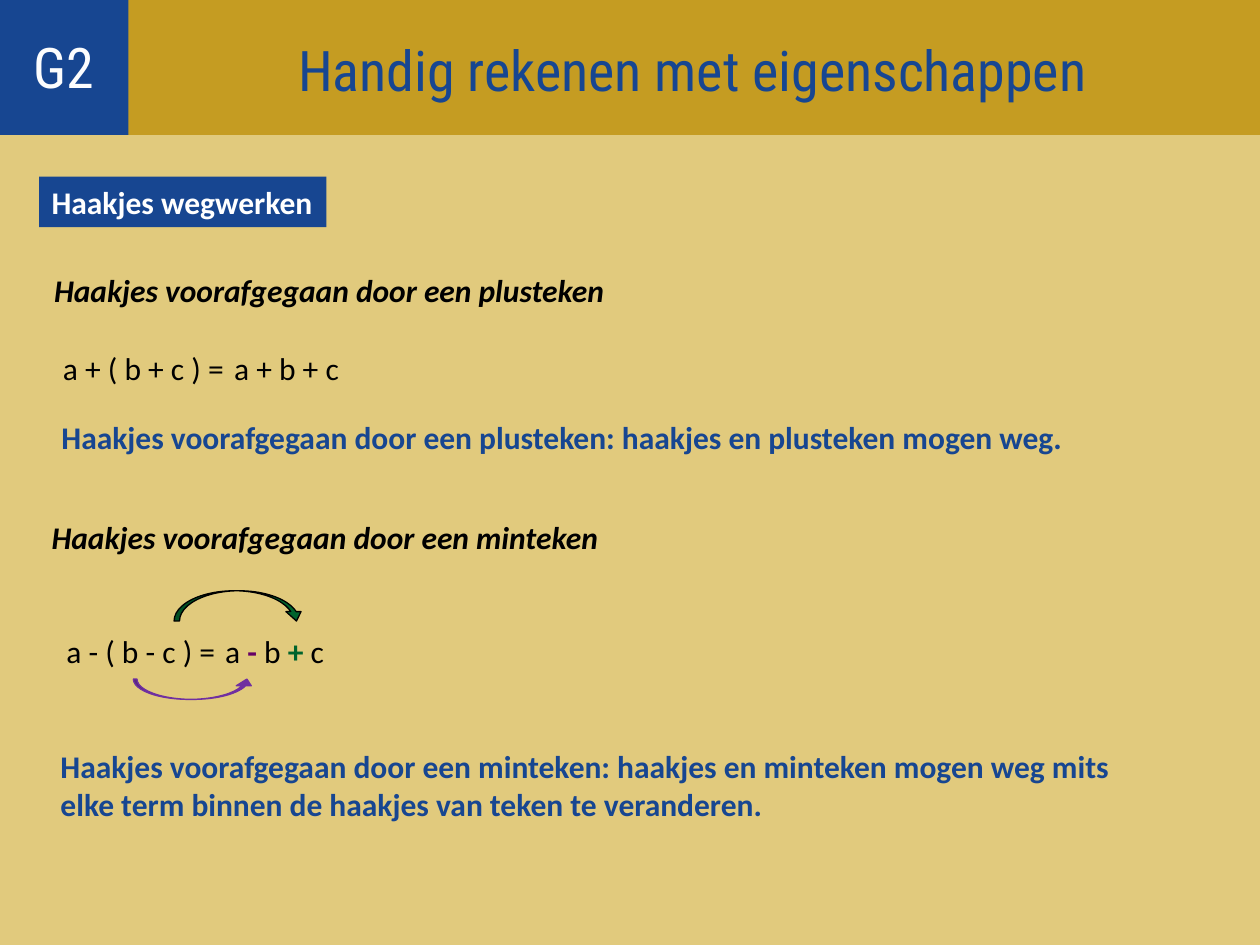
from pptx import Presentation
from pptx import util as u
from pptx.dml.color import RGBColor
from pptx.enum import shapes, text

HUES = {
    "sand": "E1CA7D", "gold": "C59C22", "blue": "174691", "white": "FFFFFF",
    "pale": "FCFDFE", "black": "000000", "plum": "660066", "green": "00642D",
    "violet": "7030A0",
}
LINE = 1.02  # height of a one-line text box, in cm
KIND = shapes.MSO_SHAPE


def hue(name):
    return RGBColor.from_string(HUES[name])


def place(box, left, top, wide, high):
    """Turn an offset within box (left, top in cm) into slide lengths."""
    return [u.Cm(n) for n in (box[0] + left, box[1] + top, wide, high)]


def style(par, color, size=18, face="Calibri", bold=None, slant=None):
    font = par.font
    font.name, font.size = face, u.Pt(size)
    font.bold, font.italic = bold, slant
    font.color.rgb = hue(color)


def label(slide, spot, lines, color="black", wrap=False, **look):
    """Add a text box; each line is a list of (words, color or None) runs."""
    item = slide.shapes.add_textbox(*spot)
    frame = item.text_frame
    frame.word_wrap = wrap
    frame.auto_size = text.MSO_AUTO_SIZE.SHAPE_TO_FIT_TEXT
    for i, runs in enumerate(lines):
        par = frame.add_paragraph() if i else frame.paragraphs[0]
        style(par, color, **look)
        for words, tint in runs:
            run = par.add_run()
            run.text = words
            if tint:
                run.font.color.rgb = hue(tint)
                run.font.bold = True
    return item


def plain(*lines):
    return [[(line, None)] for line in lines]


def solid(slide, kind, spot, fill, line=None):
    item = slide.shapes.add_shape(kind, *spot)
    item.shadow.inherit = False
    item.fill.solid()
    item.fill.fore_color.rgb = hue(fill)
    if line:
        item.line.color.rgb = hue(line)
        item.line.width = u.Pt(0.75)
    else:
        item.line.fill.background()
    return item


def arrow(slide, kind, spot, fill, line, bends):
    item = solid(slide, kind, spot, fill, line)
    for i, bend in enumerate(bends):
        item.adjustments[i] = bend


def header(slide, box):
    code = 2.59  # width of the code block
    parts = (("Handig rekenen met eigenschappen", box[2], "gold", "blue"),
             ("G2", code, "blue", "pale"))
    for words, wide, fill, color in parts:
        item = solid(slide, KIND.RECTANGLE, place(box, 0, 0, wide, box[3]), fill)
        frame = item.text_frame
        frame.word_wrap = True
        frame.vertical_anchor = text.MSO_ANCHOR.MIDDLE
        if wide > code:
            frame.margin_left = u.Cm(code + 0.2)
            frame.margin_top = u.Cm(0.25)
        par = frame.paragraphs[0]
        par.text = words
        par.alignment = text.PP_ALIGN.CENTER
        style(par, color, 32, "Roboto Condensed")


def badge(slide, box):
    item = label(slide, place(box, 0, 0, *box[2:]), plain("Haakjes wegwerken"),
                 "white", bold=True)
    item.fill.solid()
    item.fill.fore_color.rgb = hue("blue")


def plus(slide, box):
    label(slide, place(box, 0, 0, 11.68, LINE),
          plain("Haakjes voorafgegaan door een plusteken"), bold=True, slant=True)
    label(slide, place(box, 0.18, 1.58, 3.78, LINE), plain("a + ( b + c ) ="))
    label(slide, place(box, 3.63, 1.58, 2.64, LINE), plain("a + b + c"))
    label(slide, place(box, 0.15, 2.98, 23.32, LINE),
          plain("Haakjes voorafgegaan door een plusteken: "
                "haakjes en plusteken mogen weg."),
          "blue", wrap=True, bold=True)


def minus(slide, box):
    label(slide, place(box, 0, 0, 11.61, LINE),
          plain("Haakjes voorafgegaan door een minteken"), bold=True, slant=True)
    label(slide, place(box, 0.3, 2.31, 3.53, LINE), plain("a - ( b - c ) ="))
    label(slide, place(box, 3.5, 2.31, 2.51, LINE),
          [[("a ", None), ("-", "plum"), (" b ", None), ("+", "green"),
            (" c", None)]])
    arrow(slide, KIND.CURVED_UP_ARROW, place(box, 1.9, 3.38, 2.44, 0.41),
          "violet", "violet", (0.18, 0.74, 0.33))
    arrow(slide, KIND.CURVED_DOWN_ARROW, place(box, 2.72, 1.6, 2.62, 0.61),
          "green", "black", (0.18, 0.5, 0.31))
    label(slide, place(box, 0.18, 4.63, 22.94, 1.78),
          plain("Haakjes voorafgegaan door een minteken: "
                "haakjes en minteken mogen weg mits",
                "elke term binnen de haakjes van teken te veranderen."),
          "blue", wrap=True, bold=True)


def main():
    deck = Presentation()
    deck.slide_width, deck.slide_height = u.Cm(25.4), u.Cm(19.05)
    slide = deck.slides.add_slide(deck.slide_layouts[6])
    back = slide.background.fill
    back.solid()
    back.fore_color.rgb = hue("sand")
    header(slide, (0, -0.05, 25.4, 2.77))
    badge(slide, (0.79, 3.56, 5.79, LINE))
    plus(slide, (0.84, 5.33))
    minus(slide, (0.79, 10.31))
    deck.save("out.pptx")


if __name__ == "__main__":
    main()
